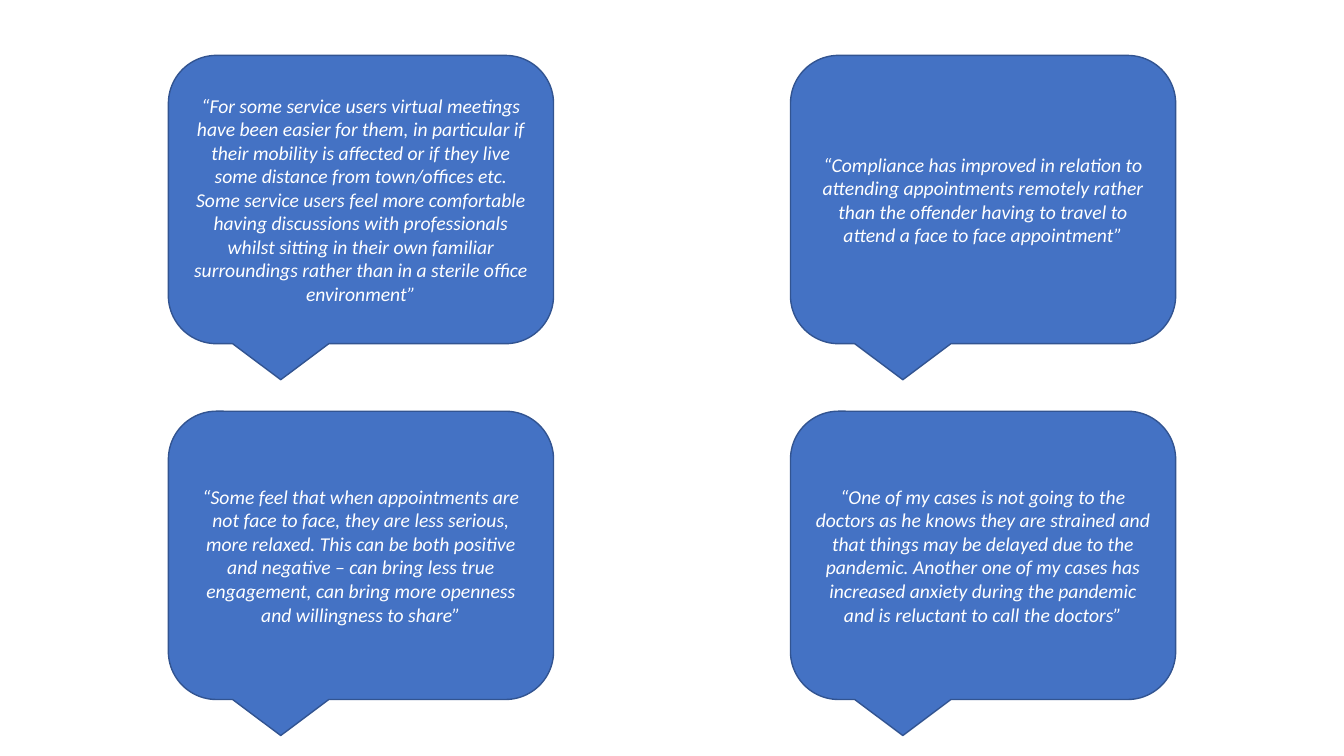
"""Build a slide of four quotes in speech bubbles."""
from pptx import Presentation
from pptx.dml.color import RGBColor
from pptx.enum.shapes import MSO_SHAPE
from pptx.enum.text import MSO_ANCHOR, PP_ALIGN
from pptx.util import Inches, Pt

COLORS = {"fill": "4472C4", "line": "325491", "text": "FFFFFF"}
LEFT, TOP = 1.67, 0.55
WIDTH, HEIGHT = 3.82, 2.86
STEP_X, STEP_Y = 6.17, 3.53

QUOTES = [
    [
        "“For some service users virtual meetings have been easier for them, "
        "in particular if their mobility is affected or if they live some "
        "distance from town/offices etc. Some service users feel more "
        "comfortable having discussions with professionals whilst sitting in "
        "their own familiar surroundings rather than in a sterile office "
        "environment”",
        "“Compliance has improved in relation to attending appointments "
        "remotely rather than the offender having to travel to attend a face "
        "to face appointment”",
    ],
    [
        "“Some feel that when appointments are not face to face, they are "
        "less serious, more relaxed. This can be both positive and negative "
        "– can bring less true engagement, can bring more openness and "
        "willingness to share”",
        "“One of my cases is not going to the doctors as he knows they are "
        "strained and that things may be delayed due to the pandemic. Another "
        "one of my cases has increased anxiety during the pandemic and is "
        "reluctant to call the doctors”",
    ],
]


class Painter:
    def __init__(self, slide, font="Calibri", size=14):
        self.slide = slide
        self.font = font
        self.size = size

    def color(self, name):
        return RGBColor.from_string(COLORS[name])

    def bubble(self, left, top, quote):
        shape = self.slide.shapes.add_shape(
            MSO_SHAPE.ROUNDED_RECTANGULAR_CALLOUT,
            Inches(left), Inches(top), Inches(WIDTH), Inches(HEIGHT))
        shape.shadow.inherit = False
        shape.fill.solid()
        shape.fill.fore_color.rgb = self.color("fill")
        shape.line.color.rgb = self.color("line")
        shape.line.width = Pt(1)
        frame = shape.text_frame
        frame.word_wrap = True
        frame.vertical_anchor = MSO_ANCHOR.MIDDLE
        frame.text = quote
        para = frame.paragraphs[0]
        para.alignment = PP_ALIGN.CENTER
        para.font.name = self.font
        para.font.size = Pt(self.size)
        para.font.italic = True
        para.font.color.rgb = self.color("text")


def main():
    deck = Presentation()
    deck.slide_width = Inches(13.33)
    deck.slide_height = Inches(7.5)
    painter = Painter(deck.slides.add_slide(deck.slide_layouts[6]))
    for row, quotes in enumerate(QUOTES):
        for col, quote in enumerate(quotes):
            painter.bubble(LEFT + col * STEP_X, TOP + row * STEP_Y, quote)
    deck.save("out.pptx")


if __name__ == "__main__":
    main()
